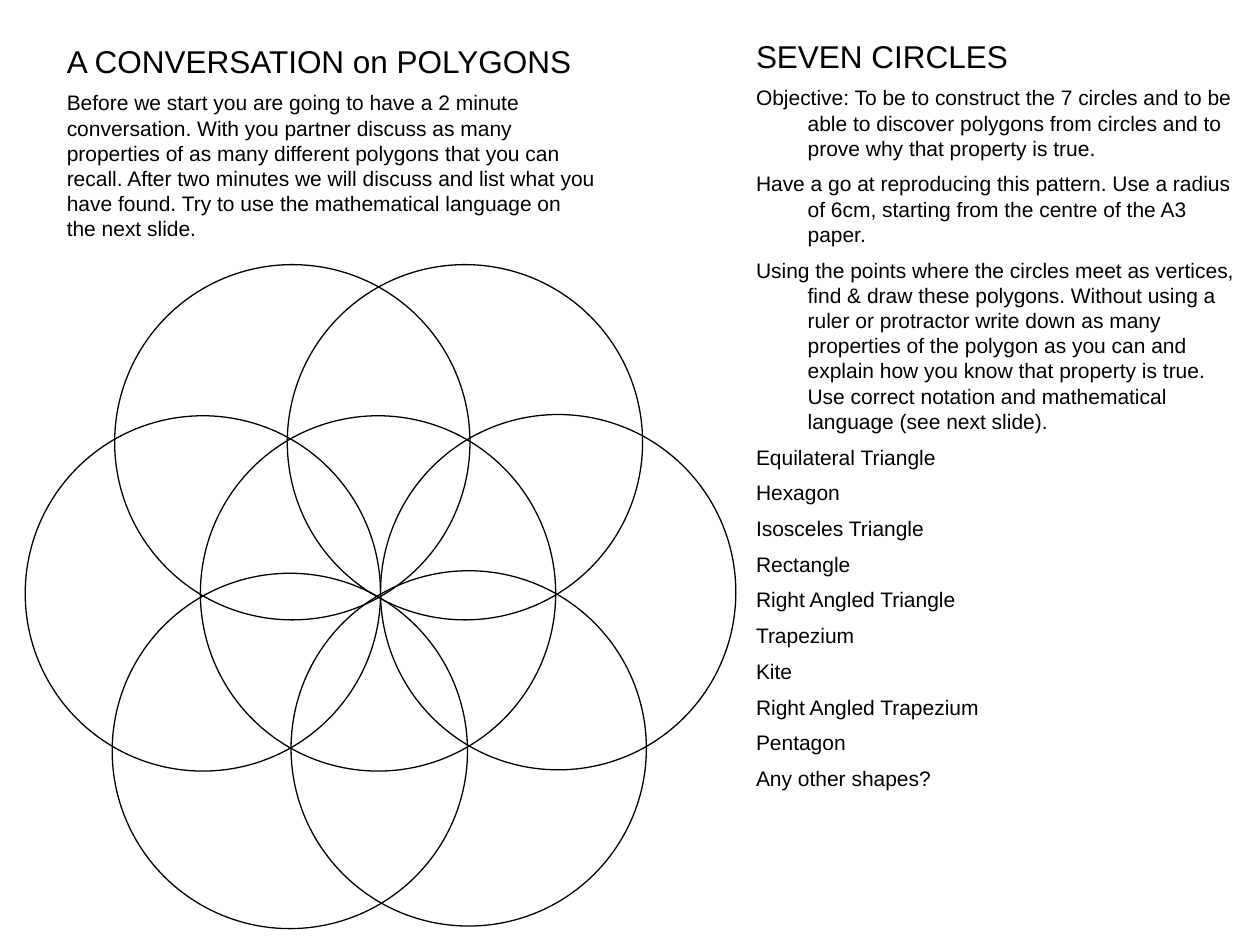
from lxml import etree
from pptx import Presentation
from pptx.dml.color import RGBColor
from pptx.enum.shapes import MSO_SHAPE
from pptx.enum.text import MSO_ANCHOR, MSO_AUTO_SIZE, PP_ALIGN
from pptx.oxml.ns import qn
from pptx.util import Inches, Pt

BLACK = RGBColor(0, 0, 0)
WHITE = RGBColor(255, 255, 255)
OVAL = MSO_SHAPE.OVAL
TOP = MSO_ANCHOR.TOP
LEFT = PP_ALIGN.LEFT
GROW = MSO_AUTO_SIZE.SHAPE_TO_FIT_TEXT
FONT = "Arial"
TWO_CONTENT = 3

DIAMETER = 2.82
CIRCLE_CORNERS = [
    (1.59, 3.3), (3.02, 3.29), (2.28, 2.1), (0.91, 2.1),
    (0.2, 3.3), (0.89, 4.55), (2.31, 4.53),
]
TASKS = [
    "Objective: To be to construct the 7 circles and to be able to discover "
    "polygons from circles and to prove why that property is true.",
    "Have a go at reproducing this pattern. Use a radius of 6cm, starting "
    "from the centre of the A3 paper.",
    "Using the points where the circles meet as vertices, find & draw these "
    "polygons. Without using a ruler or protractor write down as many "
    "properties of the polygon as you can and explain how you know that "
    "property is true. Use correct notation and mathematical language "
    "(see next slide).",
]
POLYGONS = [
    "Equilateral Triangle", "Hexagon", "Isosceles Triangle", "Rectangle",
    "Right Angled Triangle", "Trapezium", "Kite", "Right Angled Trapezium",
    "Pentagon", "Any other shapes?",
]
CONVERSATION = (
    "Before we start you are going to have a 2 minute conversation. With you "
    "partner discuss as many properties of as many different polygons that "
    "you can recall. After two minutes we will discuss and list what you have "
    "found. Try to use the mathematical language on the next slide."
)


def write_paragraph(paragraph, text, size=12, hanging=0.0, before=6):
    paragraph.alignment = LEFT
    paragraph.line_spacing = 1.0
    paragraph.space_before = Pt(before)
    paragraph.space_after = Pt(0)
    properties = paragraph._p.get_or_add_pPr()
    properties.set("marL", str(Inches(hanging)))
    properties.set("indent", str(-Inches(hanging)))
    etree.SubElement(properties, qn("a:buNone"))
    run = paragraph.add_run()
    run.text = text
    run.font.name = FONT
    run.font.size = Pt(size)
    run.font.color.rgb = BLACK


class SlideBuilder:
    def __init__(self, slide):
        self.slide = slide
        slide.background.fill.solid()
        slide.background.fill.fore_color.rgb = WHITE

    def circles(self, corners, diameter):
        group = self.slide.shapes.add_group_shape()
        for left, top in corners:
            shape = group.shapes.add_shape(
                OVAL, Inches(left), Inches(top), Inches(diameter), Inches(diameter)
            )
            shape.shadow.inherit = False
            shape.fill.background()
            shape.line.color.rgb = BLACK
            shape.line.width = Pt(0.75)

    def text_block(self, index, box, heading, texts, hanging=0.0):
        shape = self.slide.placeholders[index]
        shape.left, shape.top, shape.width, shape.height = map(Inches, box)
        frame = shape.text_frame
        frame.word_wrap = True
        frame.auto_size = GROW
        frame.vertical_anchor = TOP
        write_paragraph(frame.paragraphs[0], heading, size=18, hanging=hanging, before=9)
        for text in texts:
            write_paragraph(frame.add_paragraph(), text, hanging=hanging)

    def remove_title(self):
        title = self.slide.shapes.title._element
        title.getparent().remove(title)


def main():
    presentation = Presentation()
    presentation.slide_width = Inches(10)
    presentation.slide_height = Inches(7.5)
    layout = presentation.slide_layouts[TWO_CONTENT]
    builder = SlideBuilder(presentation.slides.add_slide(layout))
    builder.remove_title()
    builder.circles(CIRCLE_CORNERS, DIAMETER)
    builder.text_block(
        2, (5.9, 0.24, 4.07, 6.36), "SEVEN CIRCLES", TASKS + POLYGONS, hanging=0.41
    )
    builder.text_block(
        1, (0.43, 0.28, 4.4, 1.72), "A CONVERSATION on POLYGONS", [CONVERSATION]
    )
    presentation.save("out.pptx")


if __name__ == "__main__":
    main()
